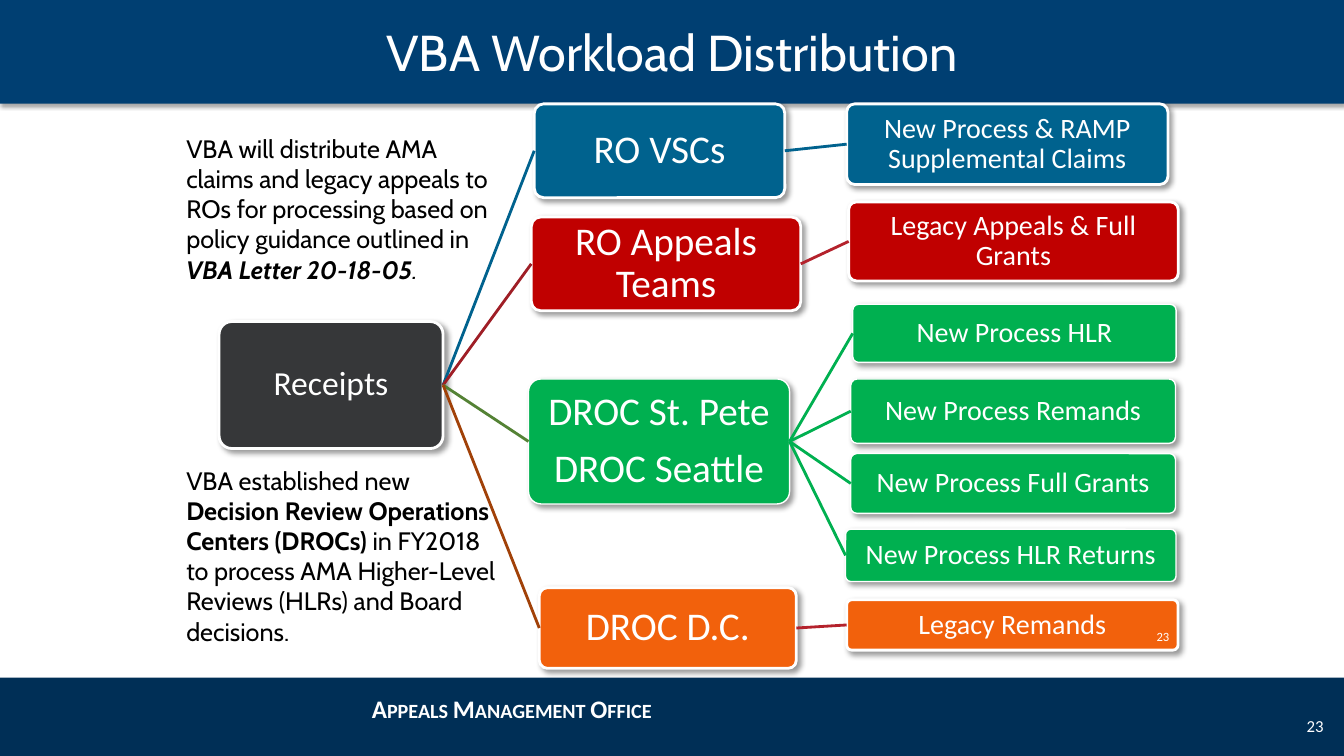
"""Build the VBA workload distribution slide."""
from lxml import etree
from pptx import Presentation
from pptx.dml.color import RGBColor as Rgb
from pptx.enum.shapes import MSO_CONNECTOR as Link, MSO_SHAPE as Kind
from pptx.enum.text import MSO_ANCHOR as Anchor, PP_ALIGN as Align
from pptx.oxml import parse_xml
from pptx.util import Pt

HUE = {
    "white": "FFFFFF", "black": "000000", "navy": "002F56", "band": "003F72",
    "gray": "363739", "blue": "00628E", "red": "C00000", "green": "00B050",
    "orange": "F2610C", "wine": "9F1E26", "rose": "B4222C", "moss": "548235",
    "rust": "A14108",
}
NS = "http://schemas.openxmlformats.org/drawingml/2006/main"


def block(kind, at, fill, shade=None):
    shape = slide.shapes.add_shape(kind, *map(Pt, at))
    shape.shadow.inherit = False
    shape.fill.solid()
    shape.fill.fore_color.rgb = Rgb.from_string(HUE[fill])
    shape.line.fill.background()
    if shade:
        blur, dist, turn, alpha = shade
        glow = shape.element.spPr.find(f"{{{NS}}}effectLst")
        glow.append(parse_xml(
            f'<a:outerShdw xmlns:a="{NS}" blurRad="{Pt(blur)}" dist="{Pt(dist)}" '
            f'dir="{turn * 60000}" algn="ctr" rotWithShape="0"><a:srgbClr val="000000">'
            f'<a:alpha val="{alpha * 1000}"/></a:srgbClr></a:outerShdw>'))
    return shape


def style(para, size, face="Calibri", hue="white", align=Align.LEFT):
    para.alignment = align
    para.font.size = Pt(size)
    para.font.name = face
    para.font.color.rgb = Rgb.from_string(HUE[hue])


deck = Presentation()
deck.slide_width, deck.slide_height = Pt(960), Pt(540)
slide = deck.slides.add_slide(deck.slide_layouts[5])

block(Kind.RECTANGLE, (0, 484, 960, 56), "navy")
block(Kind.RECTANGLE, (0, 0, 960, 74), "band", (3.1, 1.8, 90, 35))

nodes = [
    ("Receipts", None, (156.5, 229.7, 160, 90.7), "gray", None, 24, 2),
    ("RO VSCs", "Receipts", (381.6, 74.2, 179, 67), "blue", "blue", 28, 2),
    ("New Process & RAMP Supplemental Claims", "RO VSCs",
     (604.8, 74.2, 229.5, 57.6), "blue", "blue", 20, 2),
    ("RO Appeals Teams", "Receipts", (379.5, 155, 192.5, 67), "red", "wine", 28, 2),
    ("Legacy Appeals & Full Grants", "RO Appeals Teams",
     (606.2, 144.2, 235.5, 56.5), "red", "rose", 20, 2),
    ("DROC St. Pete\nDROC Seattle", "Receipts",
     (377.5, 270.7, 186.5, 89.3), "green", "moss", 28, 1),
    ("New Process HLR", "DROC St. Pete\nDROC Seattle",
     (609.1, 217.4, 231, 41.5), "green", "green", 20, 1),
    ("New Process Remands", "DROC St. Pete\nDROC Seattle",
     (607.7, 270.7, 232, 46), "green", "green", 20, 1),
    ("New Process Full Grants", "DROC St. Pete\nDROC Seattle",
     (607.7, 324, 232, 42.7), "green", "green", 20, 1),
    ("New Process HLR Returns", "DROC St. Pete\nDROC Seattle",
     (604, 378, 236, 37.4), "green", "green", 20, 1),
    ("DROC D.C.", "Receipts", (385.2, 419.8, 183.6, 57.6), "orange", "rust", 28, 2),
    ("Legacy Remands", "DROC D.C.", (604.8, 428.4, 236.7, 36), "orange", "rose", 20, 2),
]
boxes = {}
for text, source, at, fill, hue, size, edge in nodes:
    box = block(Kind.ROUNDED_RECTANGLE, at, fill, (4, 3, 45, 40))
    boxes[text] = box
    box.adjustments[0] = 0.1
    box.line.color.rgb = Rgb.from_string(HUE["white"])
    box.line.width = Pt(edge)
    frame = box.text_frame
    frame.word_wrap = True
    frame.vertical_anchor = Anchor.MIDDLE
    frame.margin_left = frame.margin_right = Pt(2)
    frame.margin_top = frame.margin_bottom = Pt(1)
    frame.text = text
    for row, para in enumerate(frame.paragraphs):
        style(para, size, align=Align.CENTER)
        para.line_spacing = 0.9
        if row:
            para.space_before = Pt(10)
    if source:
        link = slide.shapes.add_connector(Link.STRAIGHT, 0, 0, 0, 0)
        link.begin_connect(boxes[source], 3)
        link.end_connect(box, 1)
        link.line.color.rgb = Rgb.from_string(HUE[hue])
        link.line.width = Pt(2)
        etree.SubElement(link.element.spPr, f"{{{NS}}}effectLst")

title = slide.shapes.title
slide.shapes.element.append(title.element)
title.left, title.top, title.width, title.height = Pt(48), Pt(0), Pt(864), Pt(73.5)
title.text_frame.text = "VBA Workload Distribution"
title.text_frame.vertical_anchor = Anchor.MIDDLE
style(title.text_frame.paragraphs[0], 36, "Cabin", align=Align.CENTER)

notes = [
    [("VBA will distribute AMA claims and legacy appeals to ROs for processing "
      "based on policy guidance outlined in ", False, False),
     ("VBA Letter 20-18-05", True, True), (".", False, True)],
    [("VBA established new ", False, False),
     ("Decision Review Operations Centers (DROCs) ", True, False),
     ("in FY2018 to process AMA Higher-Level Reviews (HLRs) and Board decisions.",
      False, False)],
]
frame = slide.shapes.add_textbox(Pt(126), Pt(91.5), Pt(244), Pt(404.5)).text_frame
frame.word_wrap = True
for row, note in enumerate(notes):
    para = frame.add_paragraph() if row else frame.paragraphs[0]
    style(para, 18, "Cabin", "black")
    if row:
        para.space_before = Pt(129)
    for text, bold, slant in note:
        run = para.add_run()
        run.text = text
        run.font.bold = bold
        run.font.italic = slant

labels = [
    ("23", (714.2, 444.2, 126, 21.6), 9, Align.RIGHT),
    ("Appeals Management Office", (258.5, 491.8, 234, 29), 18, Align.LEFT),
    ("23", (728.6, 504, 224, 29), 12, Align.RIGHT),
]
for text, at, size, align in labels:
    frame = slide.shapes.add_textbox(*map(Pt, at)).text_frame
    frame.word_wrap = True
    frame.vertical_anchor = Anchor.MIDDLE
    frame.text = text
    para = frame.paragraphs[0]
    style(para, size, align=align)
    if align == Align.LEFT:
        para.font.bold = True
        para.runs[0].font._element.set("cap", "small")
    elif size == 9:
        frame.margin_left = frame.margin_right = Pt(5)

deck.save("out.pptx")
